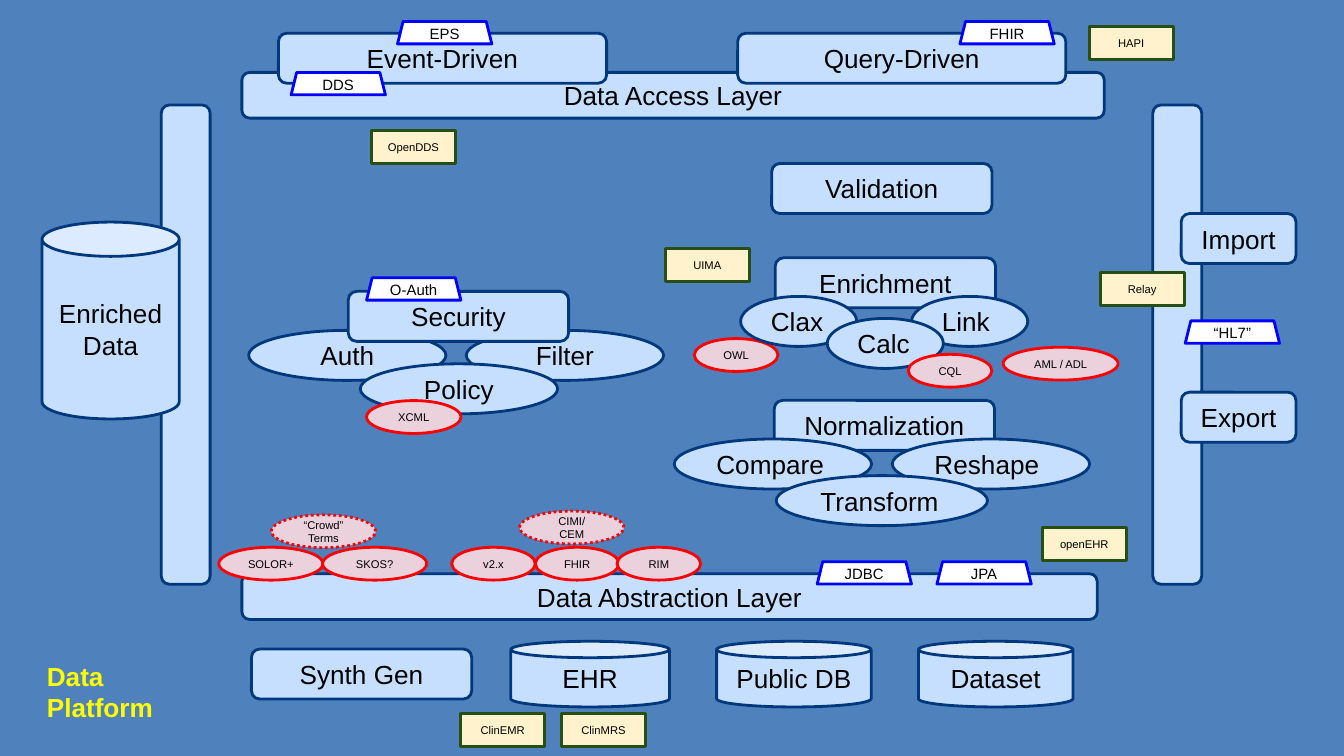
from pptx import Presentation
from pptx.dml.color import RGBColor
from pptx.enum.dml import MSO_LINE
from pptx.enum.shapes import MSO_SHAPE
from pptx.enum.text import MSO_ANCHOR, PP_ALIGN
from pptx.util import Pt

LAYER = MSO_SHAPE.FLOWCHART_ALTERNATE_PROCESS
BOX = MSO_SHAPE.ROUNDED_RECTANGLE
CAPABILITY = MSO_SHAPE.FLOWCHART_CONNECTOR
STORE = MSO_SHAPE.CAN
OVAL = MSO_SHAPE.OVAL
TRAPEZOID = MSO_SHAPE.TRAPEZOID
RECTANGLE = MSO_SHAPE.RECTANGLE
DOTTED = MSO_LINE.ROUND_DOT
MIDDLE, TOP = MSO_ANCHOR.MIDDLE, MSO_ANCHOR.TOP
CENTER, LEFT = PP_ALIGN.CENTER, PP_ALIGN.LEFT

BACKGROUND = RGBColor(0x4F, 0x81, 0xBD)
PALE_BLUE = RGBColor(0xC6, 0xDF, 0xFF)
NAVY = RGBColor(0x00, 0x38, 0x7E)
PINK = RGBColor(0xEA, 0xD1, 0xDC)
RED = RGBColor(0xFF, 0x00, 0x00)
CREAM = RGBColor(0xFF, 0xF2, 0xCC)
GREEN = RGBColor(0x27, 0x4E, 0x13)
WHITE = RGBColor(0xFF, 0xFF, 0xFF)
BLUE = RGBColor(0x00, 0x00, 0xFF)
BLACK = RGBColor(0x00, 0x00, 0x00)
YELLOW = RGBColor(0xFF, 0xFF, 0x00)


class PlatformMap:
    font = "Arial"
    inset = 7.2
    line_width = 1.5
    box_height = 26.8

    def __init__(self, slide):
        self.slide = slide
        slide.background.fill.solid()
        slide.background.fill.fore_color.rgb = BACKGROUND

    def label(self, frame, paragraphs, size, color=BLACK, bold=False, align=CENTER, anchor=MIDDLE):
        """Fill the frame with paragraphs, each a list of lines."""
        frame.word_wrap = True
        frame.vertical_anchor = anchor
        frame.margin_left = frame.margin_right = Pt(self.inset)
        frame.margin_top = frame.margin_bottom = Pt(self.inset)
        for i, lines in enumerate(paragraphs):
            paragraph = frame.add_paragraph() if i else frame.paragraphs[0]
            paragraph.alignment = align
            for j, line in enumerate(lines):
                if j:
                    paragraph.add_line_break()
                run = paragraph.add_run()
                run.text = line
                run.font.name = self.font
                run.font.size = Pt(size)
                run.font.bold = bold
                run.font.color.rgb = color

    def figure(self, kind, x, y, width, height, paragraphs, size=14,
               fill=PALE_BLUE, outline=NAVY, align=CENTER):
        shape = self.slide.shapes.add_shape(kind, Pt(x), Pt(y), Pt(width), Pt(height))
        shape.shadow.inherit = False
        shape.fill.solid()
        shape.fill.fore_color.rgb = fill
        shape.line.color.rgb = outline
        shape.line.width = Pt(self.line_width)
        self.label(shape.text_frame, paragraphs, size, align=align)
        return shape

    def layer(self, text, x, y, width):
        self.figure(LAYER, x, y, width, 24.5, [[text]])

    def pillar(self, x):
        self.figure(LAYER, x, 56.2, 26.2, 256.8, [])

    def box(self, text, x, y, width=118):
        self.figure(BOX, x, y, width, self.box_height, [[text]])

    def capability(self, text, x, y, width=105.7, align=LEFT):
        self.figure(CAPABILITY, x, y, width, self.box_height, [[text]], align=align)

    def store(self, lines, x, y, width, height=35.2):
        self.figure(STORE, x, y, width, height, [lines])

    def standard(self, paragraphs, x, y, width=44.8, dotted=False):
        oval = self.figure(OVAL, x, y, width, 17.6, [[p] for p in paragraphs], 6, PINK, RED)
        if dotted:
            oval.line.dash_style = DOTTED

    def interface(self, text, x, y):
        self.figure(TRAPEZOID, x, y, 50.5, 12, [[text]], 8, WHITE, BLUE)

    def tool(self, text, x, y):
        self.figure(RECTANGLE, x, y, 45, 17.6, [[text]], 6, CREAM, GREEN)

    def title(self, lines, x, y, width, height):
        box = self.slide.shapes.add_textbox(Pt(x), Pt(y), Pt(width), Pt(height))
        self.label(box.text_frame, [lines], 14, YELLOW, True, LEFT, TOP)


def main():
    deck = Presentation()
    deck.slide_width, deck.slide_height = Pt(720), Pt(405)
    platform = PlatformMap(deck.slides.add_slide(deck.slide_layouts[6]))

    # Access and abstraction layers, with the pillars at both sides
    platform.layer("Data Abstraction Layer", 129.6, 307.4, 458.2)
    platform.layer("Data Access Layer", 129.6, 38.8, 462)
    platform.box("Event-Driven", 149.2, 17.8, 175.8)
    platform.box("Query-Driven", 395.2, 17.8, 175.8)
    for x in (86.4, 617.6):
        platform.pillar(x)

    # Security: its box covers the capabilities
    for text, x, y in (("Auth", 133.2, 177), ("Filter", 249.8, 177), ("Policy", 193, 194.9)):
        platform.capability(text, x, y, align=CENTER)
    platform.box("Security", 186.6, 156.1)

    # Data sources, import and export
    platform.box("Synth Gen", 134.7, 347.7)
    platform.store(["EHR"], 273.6, 343.6, 85)
    platform.store(["Public DB"], 383.9, 343.6, 82.8)
    platform.store(["Dataset"], 492, 343.6, 82.8)
    platform.store(["Enriched", "Data"], 22.5, 119, 73.5, 105.5)
    platform.box("Import", 632.8, 114.4, 61.5)
    platform.box("Export", 632.8, 210.1, 61.5)

    # Processing: the capabilities cover their box
    platform.standard(["OWL"], 372, 181.4)
    platform.box("Validation", 413.4, 87.6)
    platform.box("Enrichment", 415.3, 138.1)
    for text, x, y in (("Clax", 396.8, 158.8), ("Link", 488.4, 158.8), ("Calc", 443.2, 170.6)):
        platform.capability(text, x, y, 62.2)
    platform.box("Normalization", 414.8, 214.5)
    platform.capability("Compare", 361.2, 235.2)
    platform.capability("Reshape", 478, 235.2)
    platform.capability("Transform", 415.8, 254.8, 113.2)

    # Standards: settled ones solid, emerging ones dotted
    platform.standard(["XCML"], 196.4, 214.6, 50.5)
    platform.standard(["AML / ADL"], 537.4, 186, 61.6)
    platform.standard(["CQL"], 486.6, 189.8)
    for text, x in (("FHIR", 286.8), ("RIM", 330.6), ("v2.x", 242)):
        platform.standard([text], x, 293.2)
    for text, x in (("SOLOR+", 117.2), ("SKOS?", 172.8)):
        platform.standard([text], x, 293.2, 55.8)
    platform.standard(["“Crowd”", "Terms"], 145.4, 275.8, 55.8, dotted=True)
    platform.standard(["CIMI/ CEM"], 278.4, 273.8, 55.8, dotted=True)

    # Interfaces
    for text, x, y in (
        ("FHIR", 514.3, 11.5), ("EPS", 213, 11.5), ("DDS", 156, 38.8),
        ("O-Auth", 196.4, 148.8), ("“HL7”", 635, 171.9),
        ("JDBC", 437.8, 300.9), ("JPA", 502, 300.9),
    ):
        platform.interface(text, x, y)

    # Tools
    for text, x, y in (
        ("HAPI", 583.5, 14.2), ("OpenDDS", 199, 69.9), ("UIMA", 356.4, 133.1),
        ("Relay", 589.4, 146), ("openEHR", 558.4, 282.6),
        ("ClinEMR", 246.8, 382.2), ("ClinMRS", 300.8, 382.2),
    ):
        platform.tool(text, x, y)

    platform.title(["Data", "Platform"], 18, 346.4, 90, 34.6)

    deck.save("out.pptx")


if __name__ == "__main__":
    main()
